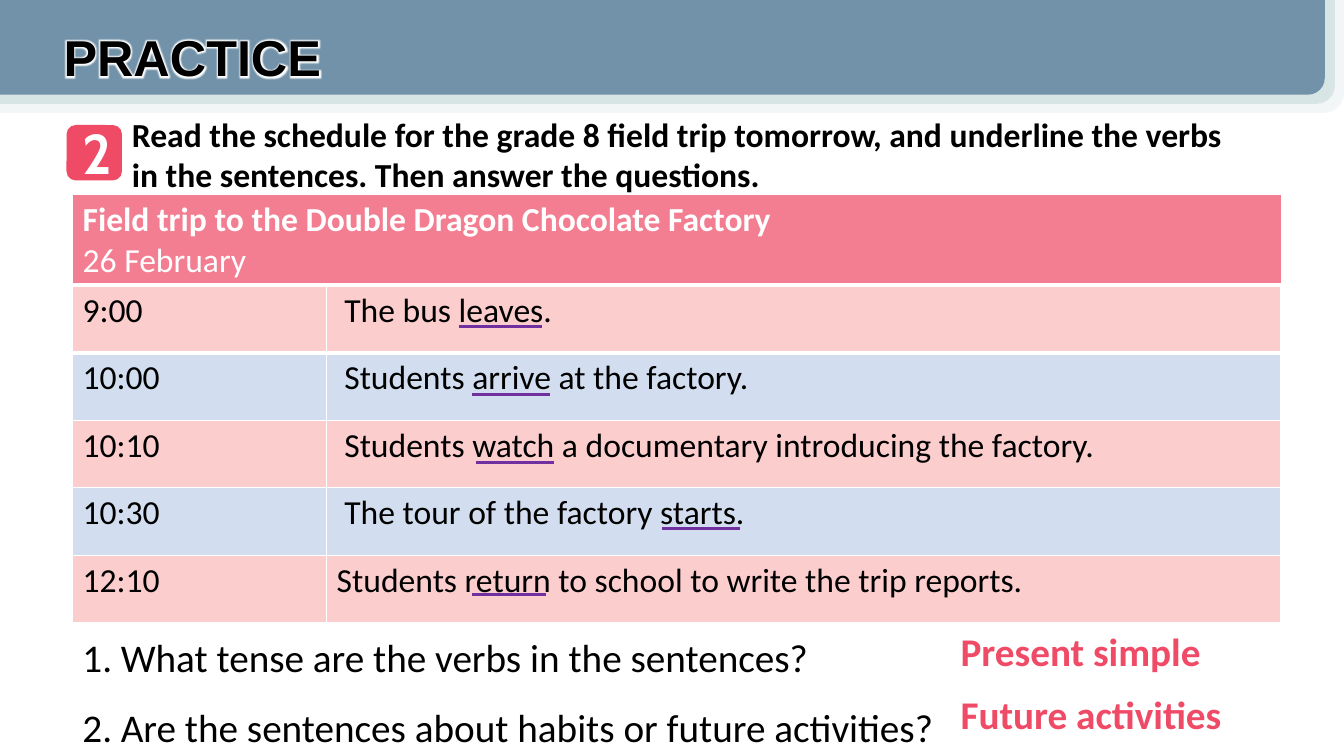
"""Build the field trip practice slide."""
from dataclasses import dataclass

from lxml.etree import SubElement
from pptx import Presentation
from pptx.dml.color import RGBColor
from pptx.enum.shapes import MSO_CONNECTOR, MSO_SHAPE
from pptx.enum.text import MSO_ANCHOR, MSO_AUTO_SIZE, PP_ALIGN
from pptx.oxml.ns import qn
from pptx.util import Inches, Pt

BLACK = RGBColor(0x00, 0x00, 0x00)
WHITE = RGBColor(0xFF, 0xFF, 0xFF)
RED = RGBColor(0xEF, 0x4B, 0x66)
ROSE = RGBColor(0xF3, 0x7D, 0x91)
PINK = RGBColor(0xFB, 0xCD, 0xCD)
BLUE = RGBColor(0xD2, 0xDE, 0xEF)
PURPLE = RGBColor(0x70, 0x30, 0xA0)


@dataclass
class Band:
    width: float
    height: float
    color: RGBColor


@dataclass
class Event:
    time: str
    text: str
    start: float
    end: float
    line: float


@dataclass
class Answer:
    text: str
    top: float


BANDS = [
    Band(13.33, 1.18, RGBColor(0xF3, 0xF6, 0xF6)),
    Band(13.24, 1.09, RGBColor(0xD8, 0xE5, 0xE5)),
    Band(13.14, 1, RGBColor(0x71, 0x92, 0xA9)),
]
EVENTS = [
    Event("9:00", " The bus leaves.", 4.55, 5.38, 3.24),
    Event("10:00", " Students arrive at the factory.", 4.68, 5.45, 3.91),
    Event("10:10", " Students watch a documentary introducing the factory.", 4.72, 5.49, 4.59),
    Event("10:30", " The tour of the factory starts.", 6.57, 7.34, 5.24),
    Event("12:10", "Students return to school to write the trip reports.", 4.68, 5.42, 5.9),
]
TASKS = [
    "What tense are the verbs in the sentences?",
    "Are the sentences about habits or future activities?",
]
ANSWERS = [Answer("Present simple", 6.17), Answer("Future activities", 6.8)]


def write(para, text: str, size=24, font="Calibri", color=BLACK, bold=False, align=PP_ALIGN.LEFT):
    """Add a formatted run to a paragraph and return the run."""
    para.alignment = align
    run = para.add_run()
    run.text = text
    run.font.size = Pt(size)
    run.font.name = font
    run.font.bold = bold
    run.font.color.rgb = color
    return run


def add_box(shapes, left: float, top: float, width: float, height: float):
    """Add a wrapping text box and return its frame."""
    frame = shapes.add_textbox(Inches(left), Inches(top), Inches(width), Inches(height)).text_frame
    frame.word_wrap = True
    return frame


def add_shape(shapes, kind, left: float, top: float, width: float, height: float, color: RGBColor):
    """Add a plain filled shape."""
    shape = shapes.add_shape(kind, Inches(left), Inches(top), Inches(width), Inches(height))
    shape.shadow.inherit = False
    shape.fill.solid()
    shape.fill.fore_color.rgb = color
    shape.line.fill.background()
    return shape


def add_color(parent, color: RGBColor) -> None:
    """Append a solid fill to an XML element."""
    fill = SubElement(parent, qn("a:solidFill"))
    SubElement(fill, qn("a:srgbClr"), val=str(color))


def add_table(shapes, top: float, widths: list, height: float, count: int):
    """Add an unbanded table with the given columns and row height."""
    frame = shapes.add_table(count, len(widths), Inches(0.72), Inches(top),
                             Inches(sum(widths)), Inches(height * count))
    table = frame.table
    table.first_row = False
    table.horz_banding = False
    for col, width in zip(table.columns, widths):
        col.width = Inches(width)
    return table


def paint(cell, color: RGBColor, base: int = 1) -> None:
    """Give a cell its white borders and its fill."""
    props = cell._tc.get_or_add_tcPr()
    for side in "LRTB":
        width = base if side == "B" else 1
        line = SubElement(props, qn(f"a:ln{side}"), w=str(Pt(width)))
        add_color(line, WHITE)
    cell.fill.solid()
    cell.fill.fore_color.rgb = color


def add_head(slide) -> None:
    """Draw the banner and the slide title."""
    title = slide.shapes.title
    group = slide.shapes.add_group_shape()
    for band in BANDS:
        shape = add_shape(group.shapes, MSO_SHAPE.ROUND_1_RECTANGLE, 0, -0.06,
                          band.width, band.height, band.color)
        shape.element.spPr.xfrm.set("flipV", "1")
    title.element.addprevious(group.element)
    title.left, title.top = Inches(0.53), Inches(0.21)
    title.width, title.height = Inches(4.52), Inches(0.71)
    frame = title.text_frame
    frame.auto_size = MSO_AUTO_SIZE.NONE
    frame.vertical_anchor = MSO_ANCHOR.TOP
    run = write(frame.paragraphs[0], "PRACTICE", size=36, font="Arial", bold=True)
    effect = SubElement(run.font.fill._xPr, qn("a:effectLst"))
    glow = SubElement(effect, qn("a:glow"), rad=str(Pt(4)))
    SubElement(glow, qn("a:srgbClr"), val=str(WHITE))
    run.font.fill._xPr.find(qn("a:latin")).addprevious(effect)


def add_task(shapes) -> None:
    """Draw the numbered badge and the instruction."""
    add_shape(shapes, MSO_SHAPE.ROUNDED_RECTANGLE, 0.66, 1.24, 0.55, 0.55, RED)
    frame = add_box(shapes, 1.21, 1.08, 11.31, 0.91)
    write(frame.paragraphs[0], "Read the schedule for the grade 8 field trip tomorrow, and underline "
          "the verbs in the sentences. Then answer the questions.", bold=True)
    frame = add_box(shapes, 0.72, 1.13, 0.43, 0.77)
    write(frame.paragraphs[0], "2", size=40, font="Cabin", color=WHITE, bold=True,
          align=PP_ALIGN.CENTER)


def add_plan(shapes) -> None:
    """Draw the schedule, its heading and the verb underlines."""
    table = add_table(shapes, 2.83, [2.52, 9.46], 0.67, len(EVENTS))
    for row, event in enumerate(EVENTS):
        for col, text in enumerate((event.time, event.text)):
            cell = table.cell(row, col)
            paint(cell, BLUE if row % 2 else PINK, 1 if row else 3)
            write(cell.text_frame.paragraphs[0], text)
    cell = add_table(shapes, 1.93, [11.99], 0.85, 1).cell(0, 0)
    paint(cell, ROSE, 3)
    write(cell.text_frame.paragraphs[0], "Field trip to the Double Dragon Chocolate Factory",
          color=WHITE, bold=True)
    write(cell.text_frame.add_paragraph(), "26 February", color=WHITE)
    for event in EVENTS:
        line = shapes.add_connector(MSO_CONNECTOR.STRAIGHT, Inches(event.start), Inches(event.line),
                                    Inches(event.end), Inches(event.line))
        line.line.color.rgb = PURPLE
        line.line.width = Pt(2)
        SubElement(line.element.spPr, qn("a:effectLst"))


def add_quiz(shapes) -> None:
    """Draw the numbered questions and their answers."""
    frame = add_box(shapes, 0.72, 6.23, 11.77, 1.21)
    for row, text in enumerate(TASKS):
        para = frame.add_paragraph() if row else frame.paragraphs[0]
        write(para, text, size=28)
        if row:
            para.line_spacing = 1.5
        props = para._p.get_or_add_pPr()
        props.set("marL", str(Inches(0.38)))
        props.set("indent", str(Inches(-0.38)))
        SubElement(props, qn("a:buFont"), typeface="+mj-lt")
        SubElement(props, qn("a:buAutoNum"), type="arabicPeriod")
    for answer in ANSWERS:
        frame = add_box(shapes, 9.43, answer.top, 2.93, 0.57)
        write(frame.paragraphs[0], answer.text, size=28, color=RED, bold=True)


def main() -> None:
    """Build and save the slide."""
    deck = Presentation()
    deck.slide_width, deck.slide_height = Inches(13.33), Inches(7.5)
    slide = deck.slides.add_slide(deck.slide_layouts.get_by_name("Title Only"))
    add_head(slide)
    add_task(slide.shapes)
    add_plan(slide.shapes)
    add_quiz(slide.shapes)
    deck.save("out.pptx")


if __name__ == "__main__":
    main()
